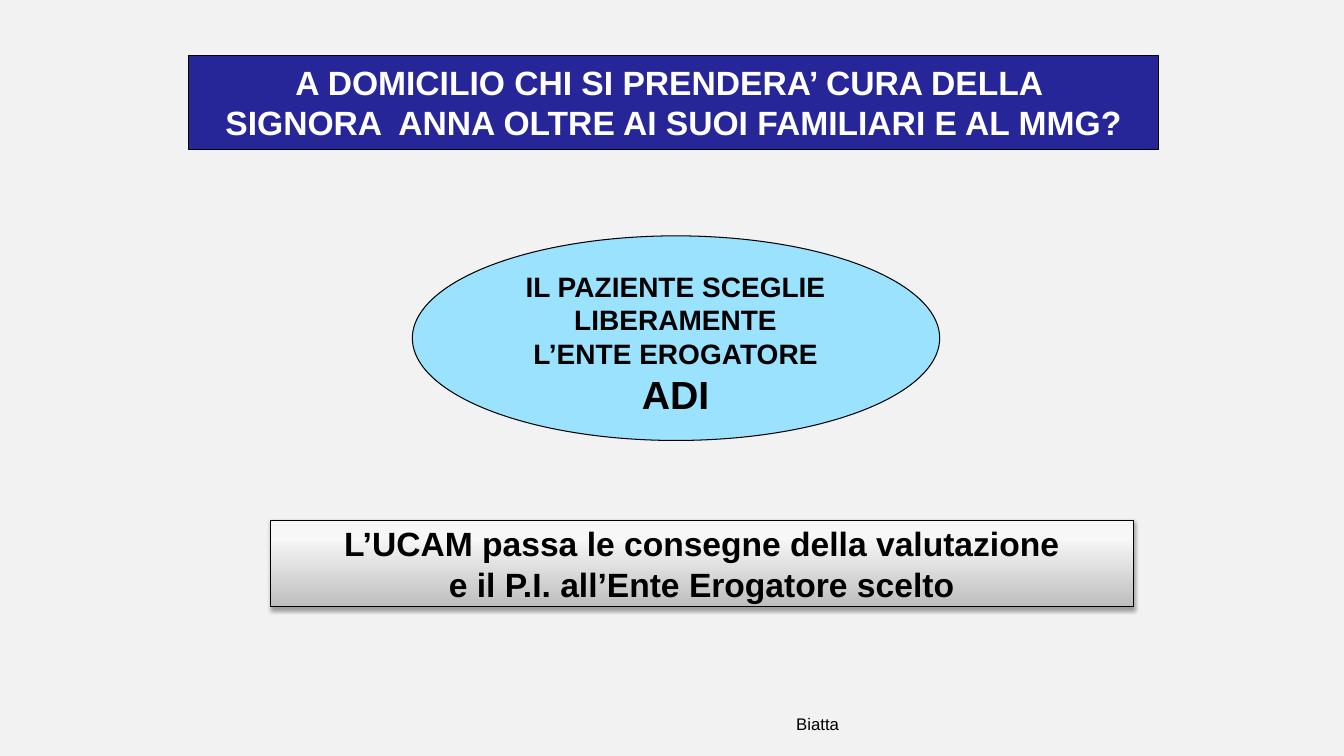
from lxml.etree import SubElement
from pptx import Presentation
from pptx.dml.color import RGBColor
from pptx.enum.shapes import MSO_SHAPE as Preset
from pptx.enum.text import MSO_ANCHOR as Anchor, MSO_AUTO_SIZE as AutoSize, PP_ALIGN as Align
from pptx.oxml.ns import qn
from pptx.util import Inches, Pt

BACKGROUND = RGBColor(0xF2, 0xF2, 0xF2)
NAVY = RGBColor(0x26, 0x26, 0x99)
SKY = RGBColor(0x9B, 0xE2, 0xFF)
BLACK = RGBColor(0, 0, 0)
WHITE = RGBColor(255, 255, 255)
SILVER_STOPS = [(0, "BEBEBE"), (80, "F7F7F7"), (100, "F8F8F8")]

QUESTION = [("A DOMICILIO CHI SI PRENDERA’ CURA DELLA ", 24),
            ("SIGNORA  ANNA OLTRE AI SUOI FAMILIARI E AL MMG?", 24)]
CHOICE = [("IL PAZIENTE SCEGLIE LIBERAMENTE L’ENTE EROGATORE", 20), ("ADI", 28)]
HANDOVER = [("L’UCAM passa le consegne della valutazione", 24),
            ("e il P.I. all’Ente Erogatore scelto", 24)]
AUTHOR = [("Biatta", 12)]

QUESTION_AT = (1.87, 0.55, 9.62, 0.93)
ELLIPSE_AT = (4.09, 2.34, 5.23, 2.03)
CHOICE_AT = (5.1, 2.62, 3.2, 1.58)
HANDOVER_AT = (2.68, 5.16, 8.56, 0.86)
AUTHOR_AT = (3.56, 7.03, 9.1, 0.4)


def inches(place):
    """Convert a place in inches to lengths."""
    return [Inches(value) for value in place]


def write(box, lines, color=BLACK, bold=True, anchor=Anchor.TOP, fit=AutoSize.NONE):
    """Fill a box with centred lines of text, each with its size."""
    frame = box.text_frame
    frame.word_wrap = True
    frame.auto_size = fit
    frame.vertical_anchor = anchor
    for index, (text, size) in enumerate(lines):
        para = frame.add_paragraph() if index else frame.paragraphs[0]
        para.alignment = Align.CENTER
        span = para.add_run()
        span.text = text
        span.font.name = "Arial"
        span.font.size = Pt(size)
        span.font.bold = bold
        span.font.color.rgb = color


def outline(shape, fill=None):
    """Give a shape a thin black line and an optional solid fill."""
    shape.line.color.rgb = BLACK
    shape.line.width = Pt(0.75)
    if fill is not None:
        shape.fill.solid()
        shape.fill.fore_color.rgb = fill


def add_color(parent, value):
    """Append an RGB colour element."""
    return SubElement(parent, qn("a:srgbClr"), val=value)


def add_gradient(shape, stops):
    """Fill a shape with a gradient rising from its bottom edge."""
    shape.fill.gradient()
    shape.fill.gradient_angle = 90
    stop_list = shape.element.spPr.find(".//" + qn("a:gsLst"))
    for stop in list(stop_list):
        stop_list.remove(stop)
    for percent, value in stops:
        add_color(SubElement(stop_list, qn("a:gs"), pos=str(percent * 1000)), value)


def add_shadow(shape, blur, distance, opacity):
    """Cast a soft black shadow straight down."""
    effects = shape.element.spPr.find(qn("a:effectLst"))
    shadow = SubElement(effects, qn("a:outerShdw"), blurRad=str(Pt(blur)),
                        dist=str(Pt(distance)), dir="5400000", rotWithShape="0")
    SubElement(add_color(shadow, "000000"), qn("a:alpha"), val=str(opacity * 1000))


def main():
    """Build the slide and save it."""
    deck = Presentation()
    deck.slide_width, deck.slide_height = Inches(13.33), Inches(7.5)
    page = deck.slides.add_slide(deck.slide_layouts[5])
    page.background.fill.solid()
    page.background.fill.fore_color.rgb = BACKGROUND

    title = page.shapes.title
    title.left, title.top, title.width, title.height = inches(QUESTION_AT)
    outline(title, NAVY)
    write(title, QUESTION, color=WHITE, anchor=Anchor.MIDDLE)

    ellipse = page.shapes.add_shape(Preset.OVAL, *inches(ELLIPSE_AT))
    ellipse.shadow.inherit = False
    outline(ellipse, SKY)
    choice = page.shapes.add_textbox(*inches(CHOICE_AT))
    write(choice, CHOICE, fit=AutoSize.SHAPE_TO_FIT_TEXT)

    handover = page.shapes.add_shape(Preset.RECTANGLE, *inches(HANDOVER_AT))
    handover.shadow.inherit = False
    outline(handover)
    add_gradient(handover, SILVER_STOPS)
    add_shadow(handover, blur=3.1, distance=1.8, opacity=35)
    write(handover, HANDOVER, anchor=Anchor.MIDDLE)

    author = page.shapes.add_textbox(*inches(AUTHOR_AT))
    write(author, AUTHOR, bold=False)

    deck.save("out.pptx")


if __name__ == "__main__":
    main()
